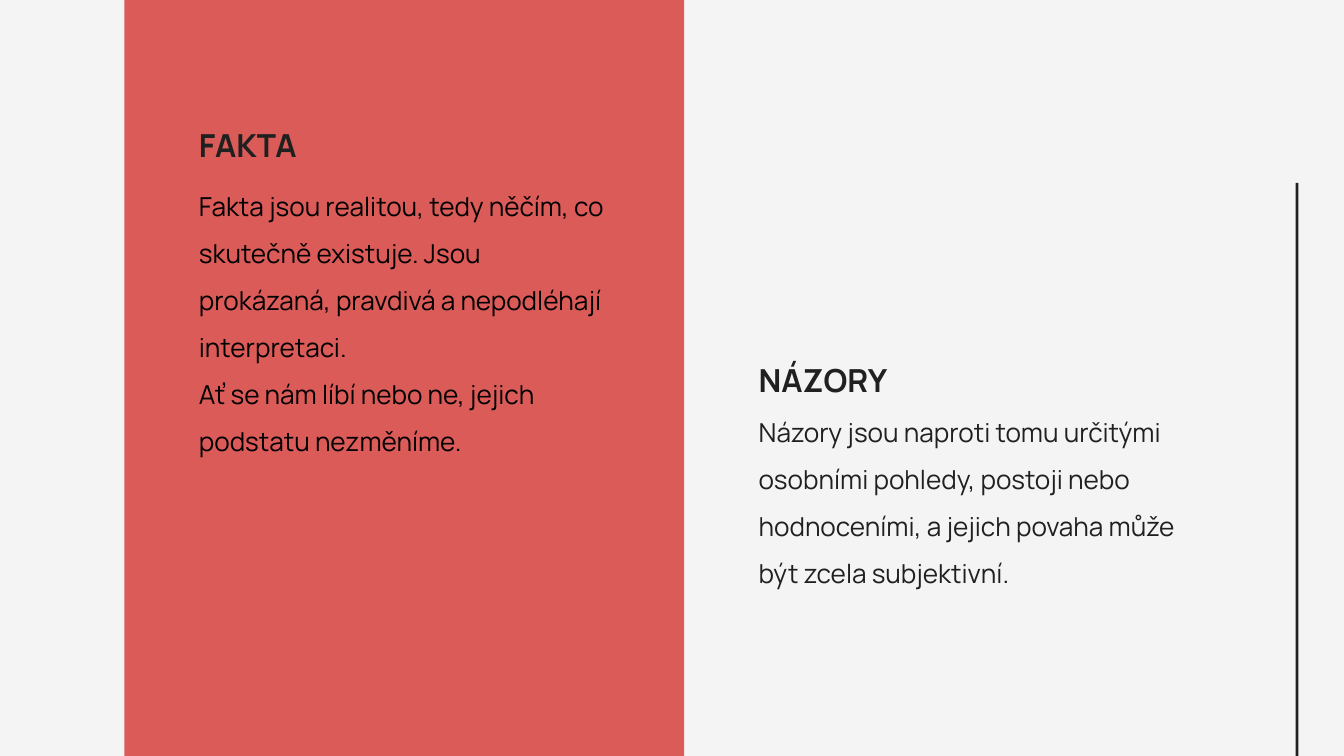
from pptx import Presentation
from pptx.dml.color import RGBColor
from pptx.enum.shapes import MSO_SHAPE
from pptx.enum.text import MSO_AUTO_SIZE
from pptx.util import Inches, Pt

RECTANGLE = MSO_SHAPE.RECTANGLE
FIT_SHAPE = MSO_AUTO_SIZE.SHAPE_TO_FIT_TEXT
FONT = "Manrope"
COLORS = {"background": "F4F4F4", "band": "DA5B58", "dark": "202020", "black": "000000"}
FACTS = [
    "Fakta jsou realitou, tedy něčím, co skutečně existuje. Jsou prokázaná, "
    "pravdivá a nepodléhají interpretaci.",
    "Ať se nám líbí nebo ne, jejich podstatu nezměníme.",
]
OPINIONS = [
    "Názory jsou naproti tomu určitými osobními pohledy, postoji nebo "
    "hodnoceními, a jejich povaha může být zcela subjektivní.",
]


def rgb(name):
    """Return the named colour."""
    return RGBColor.from_string(COLORS[name])


def add_block(s, left, top, width, height, color):
    """Add a plain filled rectangle."""
    sp = s.shapes.add_shape(RECTANGLE, Inches(left), Inches(top), Inches(width), Inches(height))
    sp.shadow.inherit = False
    sp.fill.solid()
    sp.fill.fore_color.rgb = rgb(color)
    sp.line.fill.background()


def add_text(s, left, top, width, height, paragraphs, size, spacing, color, bold=False):
    """Add a text box without margins, one run per paragraph."""
    sp = s.shapes.add_textbox(Inches(left), Inches(top), Inches(width), Inches(height))
    tf = sp.text_frame
    tf.word_wrap = True
    tf.auto_size = FIT_SHAPE
    tf.margin_left = tf.margin_top = tf.margin_right = tf.margin_bottom = 0
    for i, text in enumerate(paragraphs):
        p = tf.add_paragraph() if i else tf.paragraphs[0]
        p.line_spacing = spacing
        r = p.add_run()
        r.text = text
        r.font.name = FONT
        r.font.size = Pt(size)
        r.font.bold = bold
        r.font.color.rgb = rgb(color)


def add_heading(s, left, top, text):
    """Add a bold column heading."""
    add_text(s, left, top, 6.12, 0.69, [text], 34, 1.2, "dark", bold=True)


def add_body(s, left, top, width, height, paragraphs, color):
    """Add the body text of a column."""
    add_text(s, left, top, width, height, paragraphs, 28, 1.5, color)


def main():
    """Build the slide and save it."""
    prs = Presentation()
    prs.slide_width, prs.slide_height = Inches(20), Inches(11.25)
    s = prs.slides.add_slide(prs.slide_layouts.get_by_name("Blank"))
    s.background.fill.solid()
    s.background.fill.fore_color.rgb = rgb("background")

    add_block(s, 1.85, -0.6, 8.33, 12.46, "band")
    add_heading(s, 2.96, 1.76, "FAKTA")
    add_body(s, 2.96, 2.6, 6.12, 4.24, FACTS, "black")
    add_heading(s, 11.29, 5.26, "NÁZORY")
    add_body(s, 11.29, 5.96, 6.61, 2.83, OPINIONS, "dark")
    add_block(s, 19.28, 2.72, 0.04, 9, "dark")

    prs.save("out.pptx")


if __name__ == "__main__":
    main()
